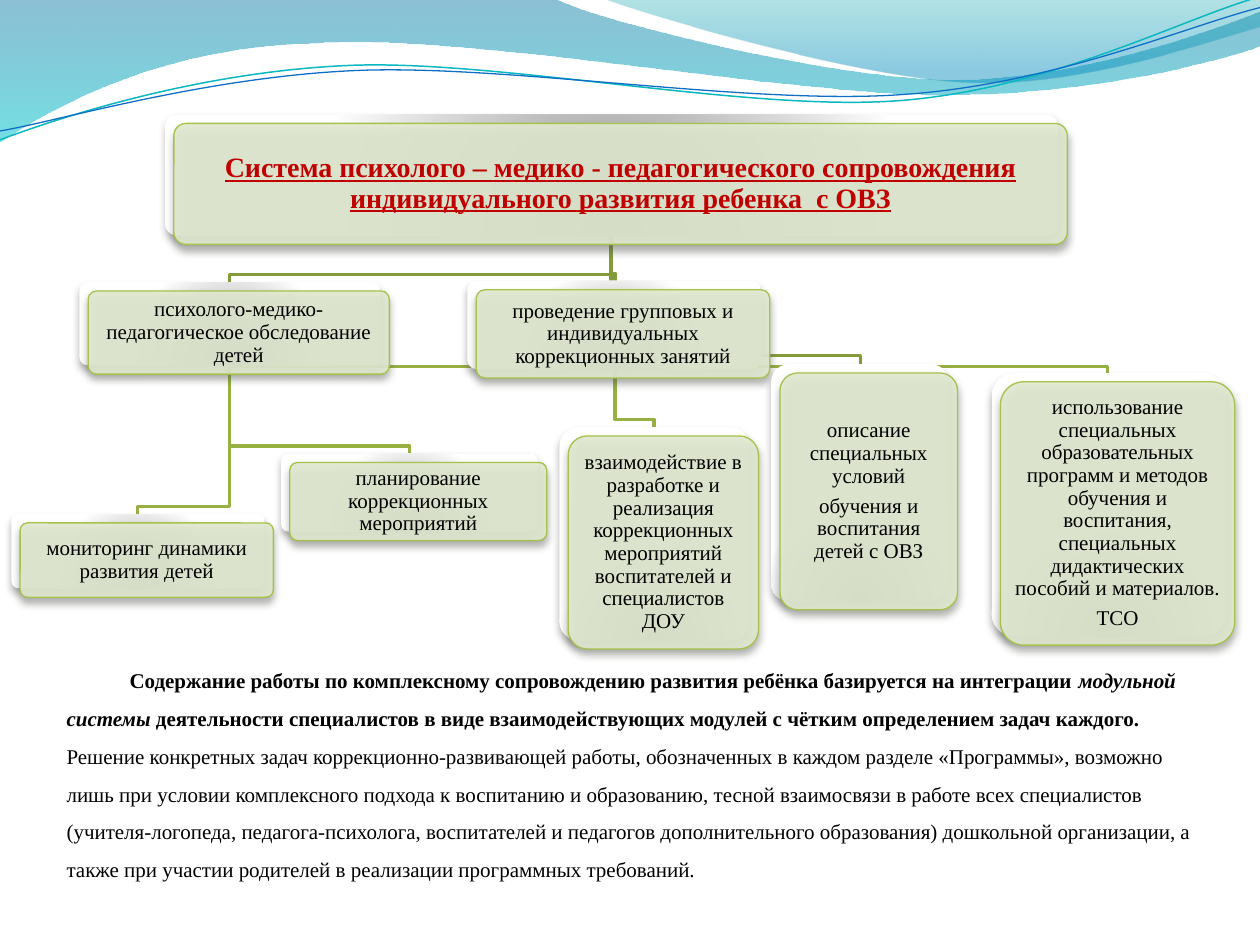
from lxml import etree
from pptx import Presentation, util as u
from pptx.dml.color import RGBColor
from pptx.enum import shapes, text
from pptx.oxml.ns import qn

prs = Presentation()
prs.slide_width, prs.slide_height = u.Inches(10), u.Inches(7.5)
s = prs.slides.add_slide(prs.slide_layouts[6])
rgb = RGBColor.from_string


def outline(steps, closed=False):
    pts = [(u.Inches(step[k]), u.Inches(step[k + 1])) for step in steps for k in range(0, len(step), 2)]
    fb = s.shapes.build_freeform(*pts[0])
    fb.add_line_segments(pts[1:], close=closed)
    sp = fb.convert_to_shape()
    segments = iter(list(sp.fill._xPr.iter(qn("a:lnTo"))))
    for step in steps[1:]:
        first = next(segments)
        if len(step) == 6:
            curve = etree.Element(qn("a:cubicBezTo"))
            first.addprevious(curve)
            for segment in (first, next(segments), next(segments)):
                curve.append(segment[0])
                segment.getparent().remove(segment)
    sp.shadow.inherit = False
    sp.fill.background()
    sp.line.fill.background()
    return sp


def gradient(sp, stops, direction):
    sp.fill.background()
    spPr = sp.fill._xPr
    grad = etree.Element(qn("a:gradFill"), rotWithShape="1")
    gs_lst = etree.SubElement(grad, qn("a:gsLst"))
    for pos, color, alpha in stops:
        gs = etree.SubElement(gs_lst, qn("a:gs"), pos=str(pos * 1000))
        clr = etree.SubElement(gs, qn("a:srgbClr"), val=color)
        etree.SubElement(clr, qn("a:alpha"), val=str(alpha * 1000))
    if direction == "down":
        etree.SubElement(grad, qn("a:lin"), ang="5400000", scaled="0")
    else:
        circle = etree.SubElement(grad, qn("a:path"), path="circle")
        etree.SubElement(circle, qn("a:fillToRect"), l="50000", t="130000", r="50000", b="-30000")
    spPr.replace(spPr.find(qn("a:noFill")), grad)


waves = [
    ([(0, 0), (4.4, -0.01), (4.76, 0.17, 6.64, 0.63, 7.58, 0.63), (8.53, 0.63, 9.58, 0.26, 10, 0.09),
      (10.01, 0.36), (9.83, 0.44, 8.7, 0.76, 7.46, 0.75), (6.22, 0.75, 3.82, 0.28, 2.57, 0.34),
      (1.29, 0.36, 0.46, 0.83, -0.01, 1.13), (0, 0)],
     [(0, "0074A1", 45), (100, "00C6CF", 55)]),
    ([(4.79, -0.01), (5.09, 0.11, 6.82, 0.62, 7.69, 0.65), (8.56, 0.69, 9.61, 0.32, 10, 0.21),
      (10, 0), (4.79, -0.01)],
     [(0, "00A1A9", 30), (80, "008BBF", 45)]),
]
for steps, stops in waves:
    gradient(outline(steps, closed=True), stops, "down")

lines = [
    ("0AB8BF", 0.85, [(0, 1.11), (0.48, 0.93, 1.58, 0.57, 2.77, 0.52),
                      (3.95, 0.47, 5.93, 0.89, 7.13, 0.8), (8.33, 0.71, 9.38, 0.15, 9.98, -0.02)]),
    ("0F6FC6", 0.75, [(0, 1.04), (0.47, 0.96, 1.64, 0.61, 2.83, 0.56),
                      (4.03, 0.51, 5.97, 0.84, 7.17, 0.75), (8.36, 0.67, 9.41, 0.21, 10, 0.06)]),
]
DARK, LIGHT = "849B3A", "96B042"
branches = [
    (DARK, 4.85, 1.87, 2.82, 6.83, 2.89),
    (LIGHT, 4.88, 2.93, 3.33, 5.19, 3.4),
    (DARK, 4.85, 1.87, 2.17, 4.88, 2.23),
    (LIGHT, 1.82, 2.91, 2.91, 8.79, 2.97),
    (LIGHT, 1.82, 2.91, 3.54, 3.25, 3.6),
    (LIGHT, 1.82, 2.91, 4.02, 1.09, 4.08),
    (DARK, 4.85, 1.87, 2.18, 1.82, 2.24),
]
for color, x1, y1, bend, x2, y2 in branches:
    corners = [(x1, y1), (x1, bend), (x2, bend), (x2, y2)]
    lines.append((color, 2, corners if bend > y1 else corners[1:]))
for color, width, steps in lines:
    sp = outline(steps)
    sp.line.color.rgb = rgb(color)
    sp.line.width = u.Pt(width)

cards = [
    (1.38, 0.98, 7.09, 0.96, ["Система психолого – медико - педагогического сопровождения индивидуального развития ребенка  с ОВЗ"]),
    (0.7, 2.31, 2.39, 0.66, ["психолого-медико-педагогическое обследование детей"]),
    (0.16, 4.15, 2.01, 0.59, ["мониторинг динамики развития детей"]),
    (2.3, 3.67, 2.04, 0.62, ["планирование коррекционных мероприятий"]),
    (7.94, 3.03, 1.86, 2.09, ["использование специальных образовательных программ и методов обучения и воспитания, специальных дидактических пособий и материалов.", "ТСО"]),
    (3.78, 2.3, 2.33, 0.7, ["проведение групповых и индивидуальных коррекционных занятий"]),
    (4.51, 3.46, 1.51, 1.69, ["взаимодействие в разработке и реализация коррекционных мероприятий воспитателей и специалистов ДОУ"]),
    (6.19, 2.96, 1.41, 1.88, ["описание специальных условий", "обучения и воспитания детей с ОВЗ"]),
]
for i, (x, y, w, h, paragraphs) in enumerate(cards):
    title = i == 0
    for offset, shade in ((0.07, "5A5A5A"), (0, "4F5249")):
        sp = s.shapes.add_shape(shapes.MSO_SHAPE.ROUNDED_RECTANGLE, u.Inches(x - offset),
                                u.Inches(y - offset), u.Inches(w), u.Inches(h))
        sp.adjustments[0] = 0.1
        sp.shadow.inherit = False
        effects = sp.fill._xPr.find(qn("a:effectLst"))
        shadow = etree.SubElement(effects, qn("a:outerShdw"), blurRad=str(u.Pt(4.5)),
                                  dist=str(u.Pt(3)), dir="5400000", rotWithShape="0")
        clr = etree.SubElement(shadow, qn("a:srgbClr"), val=shade)
        etree.SubElement(clr, qn("a:alpha"), val="48000")
        if offset:
            sp.line.fill.background()
            gradient(sp, [(0, "8C8C8C", 100), (68, "FFFFFF", 100), (100, "FFFFFF", 100)], "circle")
    sp.fill.solid()
    sp.fill.fore_color.rgb = rgb("E1E9D0")
    clr = sp.fill._xPr.find(qn("a:solidFill"))[0]
    etree.SubElement(clr, qn("a:alpha"), val="90000")
    sp.line.color.rgb = rgb("A5C249")
    sp.line.width = u.Pt(0.75)
    inset = 0.03 * min(w, h)
    tf = s.shapes.add_textbox(u.Inches(x + inset), u.Inches(y + inset),
                              u.Inches(w - 2 * inset), u.Inches(h - 2 * inset)).text_frame
    tf.word_wrap = True
    tf.vertical_anchor = text.MSO_ANCHOR.MIDDLE
    tf.margin_left = tf.margin_right = tf.margin_top = tf.margin_bottom = u.Inches(0.07 if title else 0.05)
    size = 16 if title else 12
    for n, words in enumerate(paragraphs):
        p = tf.add_paragraph() if n else tf.paragraphs[0]
        p.alignment = text.PP_ALIGN.CENTER
        p.line_spacing = 0.9
        p.space_after = u.Pt(size * 0.35)
        r = p.add_run()
        r.text = words
        r.font.name = "Times New Roman"
        r.font.size = u.Pt(size)
        r.font.bold = r.font.underline = title
        r.font.color.rgb = rgb("C00000" if title else "000000")

tf = s.shapes.add_textbox(u.Inches(0.43), u.Inches(3.23), u.Inches(9.29), u.Inches(4.07)).text_frame
tf.word_wrap = True
tf.vertical_anchor = text.MSO_ANCHOR.BOTTOM
tf.margin_bottom = u.Inches(0.3)
p = tf.paragraphs[0]
p.line_spacing = 1.5
p._p.get_or_add_pPr().set("indent", str(u.Inches(0.5)))
for words, bold, italic in [
    ("Содержание работы по комплексному сопровождению развития ребёнка базируется на интеграции ", True, False),
    ("модульной системы", True, True),
    (" деятельности специалистов в виде взаимодействующих модулей с чётким определением задач каждого.", True, False),
    (" Решение конкретных задач коррекционно-развивающей работы, обозначенных в каждом разделе «Программы», возможно лишь при условии комплексного подхода к воспитанию и образованию, тесной взаимосвязи в работе всех специалистов (учителя-логопеда, педагога-психолога, воспитателей и педагогов дополнительного образования) дошкольной организации, а также при участии родителей в реализации программных требований.", False, False),
]:
    r = p.add_run()
    r.text = words
    r.font.name = "Times New Roman"
    r.font.size = u.Pt(12)
    r.font.bold, r.font.italic = bold, italic
    r.font.color.rgb = rgb("000000")

prs.save("out.pptx")
